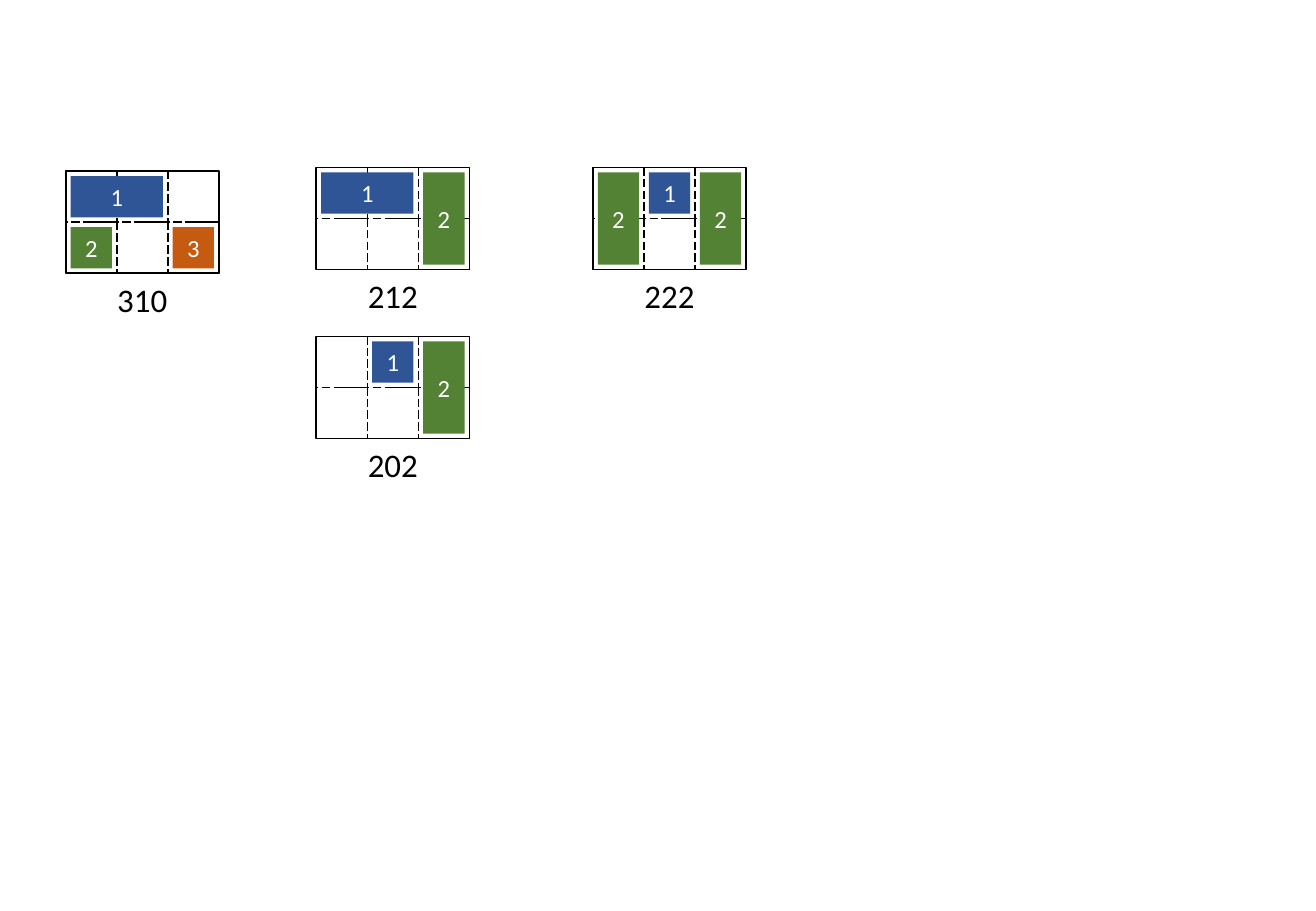
from pptx import Presentation
from pptx import util as u
from pptx.dml.color import RGBColor
from pptx.enum import dml, shapes, text

WIDE, HIGH = 10.83, 7.5
COLS, ROWS = 3, 2
CELL = 0.42
GAP = 0.04  # between a tile and the edge of its cells
BLUE, GREEN, RUST = "2F5597", "548235", "C55A11"

# label, left and top in percent of the slide,
# tiles as (text, colour, column, row, columns, rows)
BOARDS = [
    ("310", 5, 18.8, [("1", BLUE, 0, 0, 2, 1), ("2", GREEN, 0, 1, 1, 1),
                      ("3", RUST, 2, 1, 1, 1)]),
    ("212", 24.04, 18.4, [("1", BLUE, 0, 0, 2, 1), ("2", GREEN, 2, 0, 1, 2)]),
    ("202", 24.04, 36.93, [("1", BLUE, 1, 0, 1, 1), ("2", GREEN, 2, 0, 1, 2)]),
    ("222", 45.06, 18.4, [("1", BLUE, 1, 0, 1, 1), ("2", GREEN, 2, 0, 1, 2),
                          ("2", GREEN, 0, 0, 1, 2)]),
]


def tint(code):
    return RGBColor.from_string(code)


def write(frame, words, size=14.6, color="FFFFFF", font="Calibri"):
    para = frame.paragraphs[0]
    para.alignment = text.PP_ALIGN.CENTER
    run = para.add_run()
    run.text = words
    run.font.size = u.Pt(size)
    run.font.name = font
    run.font.color.rgb = tint(color)


class Board:
    """A grid of cells at a place on the slide, with its tiles and label."""

    ink = "000000"

    def __init__(self, slide, left, top):
        self.slide = slide
        self.left = WIDE * left / 100
        self.top = HIGH * top / 100

    def place(self, col, row, wide, high, gap=0):
        """Turn cells of the grid into left, top, width and height."""
        return [u.Inches(n) for n in (
            self.left + col * CELL + gap, self.top + row * CELL + gap,
            wide * CELL - 2 * gap, high * CELL - 2 * gap)]

    def rect(self, host, *area, gap=0):
        box = host.shapes.add_shape(shapes.MSO_SHAPE.RECTANGLE,
                                    *self.place(*area, gap=gap))
        box.shadow.inherit = False
        return box

    def frame(self, host, *area, dash=None):
        box = self.rect(host, *area)
        box.fill.background()
        box.line.color.rgb = tint(self.ink)
        box.line.width = u.Pt(1)
        box.line.dash_style = dash

    def grid(self):
        group = self.slide.shapes.add_group_shape()
        for row in range(ROWS):
            for col in range(COLS):
                self.frame(group, col, row, 1, 1, dash=dml.MSO_LINE.DASH)
        self.frame(group, 0, 0, COLS, ROWS)

    def label(self, words):
        box = self.slide.shapes.add_textbox(*self.place(0, ROWS, COLS, 1.02))
        box.text_frame.word_wrap = True
        box.text_frame.auto_size = text.MSO_AUTO_SIZE.SHAPE_TO_FIT_TEXT
        write(box.text_frame, words, size=19.5, color=self.ink)

    def tile(self, words, color, *area):
        box = self.rect(self.slide, *area, gap=GAP)
        box.fill.solid()
        box.fill.fore_color.rgb = tint(color)
        box.line.fill.background()
        box.text_frame.vertical_anchor = text.MSO_ANCHOR.MIDDLE
        write(box.text_frame, words)


def main():
    deck = Presentation()
    deck.slide_width, deck.slide_height = u.Inches(WIDE), u.Inches(HIGH)
    slide = deck.slides.add_slide(deck.slide_layouts[6])
    for name, left, top, tiles in BOARDS:
        board = Board(slide, left, top)
        board.grid()
        board.label(name)
        for tile in tiles:
            board.tile(*tile)
    deck.save("out.pptx")


if __name__ == "__main__":
    main()
